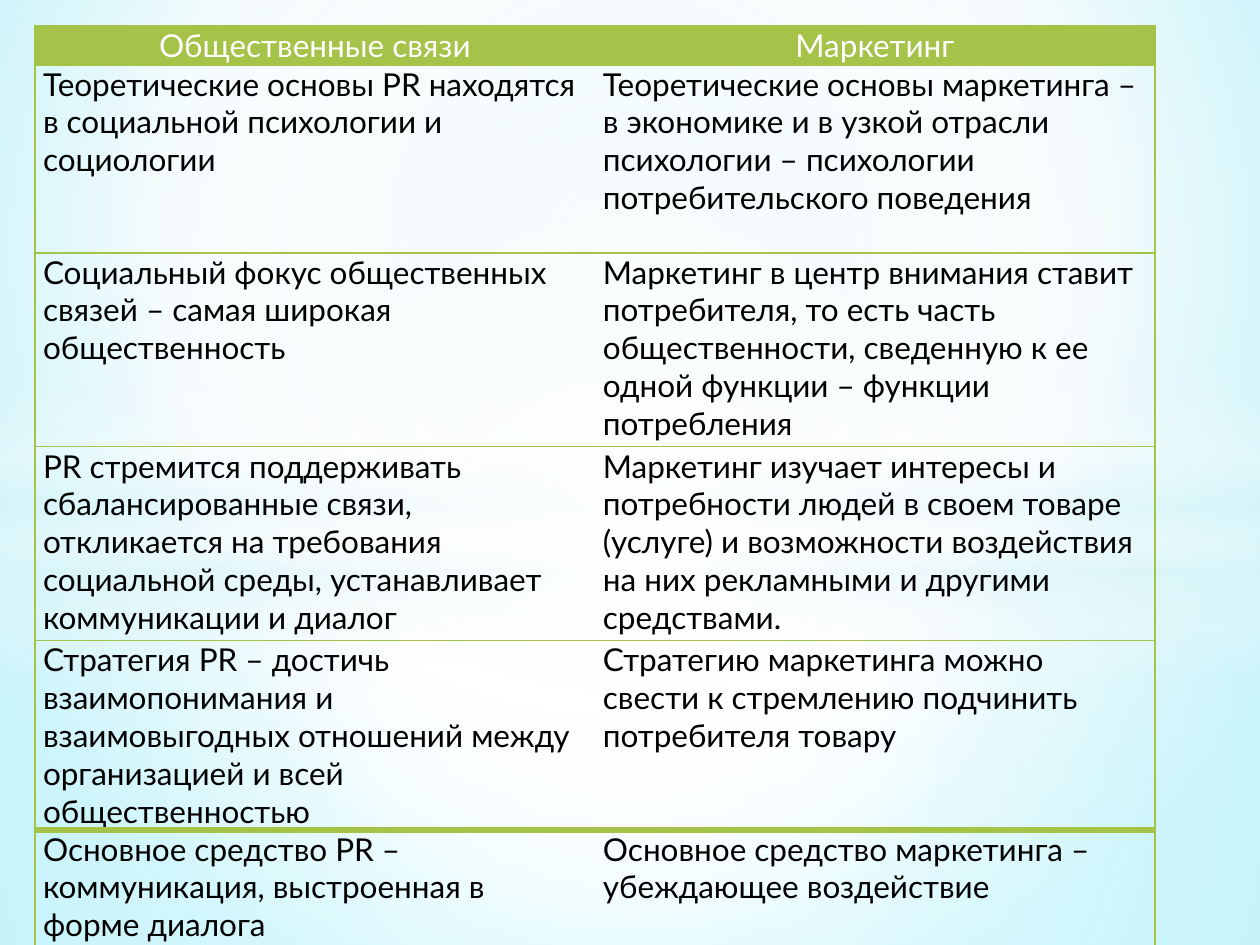
from lxml.etree import SubElement
from pptx import Presentation
from pptx.dml.color import RGBColor
from pptx.enum.shapes import MSO_SHAPE
from pptx.enum.text import PP_ALIGN
from pptx.oxml import parse_xml
from pptx.oxml.ns import nsdecls, qn
from pptx.util import Emu, Pt

PX_PER_INCH = 126
COLORS = {
    "green": "A5C249",
    "white": "FFFFFF",
    "black": "000000",
    "mist": "DBF5F9",
    "ice": "CAF0F6",
    "cyan": "79EDFF",
}
CENTER = (50, 50, 50, 50)
ROWS = [
    ("Общественные связи", "Маркетинг"),
    ("Теоретические основы PR находятся в социальной психологии и социологии",
     "Теоретические основы маркетинга – в экономике и в узкой отрасли психологии – "
     "психологии потребительского поведения"),
    ("Социальный фокус общественных связей – самая широкая общественность",
     "Маркетинг в центр внимания ставит потребителя, то есть часть общественности, "
     "сведенную к ее одной функции – функции потребления"),
    ("PR стремится поддерживать сбалансированные связи, откликается на требования "
     "социальной среды, устанавливает коммуникации и диалог",
     "Маркетинг изучает интересы и потребности людей в своем товаре (услуге) и "
     "возможности воздействия на них рекламными и другими средствами."),
    ("Стратегия PR – достичь взаимопонимания и взаимовыгодных отношений между "
     "организацией и всей общественностью",
     "Стратегию маркетинга можно свести к стремлению подчинить потребителя товару"),
    ("Основное средство PR – коммуникация, выстроенная в форме диалога",
     "Основное средство маркетинга – убеждающее воздействие"),
]
ROW_HEIGHTS = [39, 188, 194, 194, 187, 117]


def px(length):
    return Emu(round(length * 914400 / PX_PER_INCH))


class SlideBuilder:
    """Holds the text style and the current page."""

    font = "Lato"
    size = Pt(18)

    def __init__(self, page):
        self.page = page

    def gradient(self, owner, fill, stops, focus=None):
        """Radial gradient around focus, or a downward one without it; stops are (%, colour, opacity %)."""
        fill.solid()
        solid = owner.find(".//" + qn("a:solidFill"))
        grad = parse_xml(f'<a:gradFill {nsdecls("a")} rotWithShape="1"/>')
        stop_list = SubElement(grad, qn("a:gsLst"))
        for position, color, opacity in stops:
            stop = SubElement(stop_list, qn("a:gs"), pos=str(position * 1000))
            rgb = SubElement(stop, qn("a:srgbClr"), val=COLORS[color])
            if opacity < 100:
                SubElement(rgb, qn("a:alpha"), val=str(opacity * 1000))
        if focus:
            path = SubElement(grad, qn("a:path"), path="circle")
            sides = {side: str(value * 1000) for side, value in zip("ltrb", focus)}
            SubElement(path, qn("a:fillToRect"), **sides)
        else:
            SubElement(grad, qn("a:lin"), ang="5400000", scaled="0")
        solid.getparent().replace(solid, grad)

    def background(self, stops, focus):
        self.gradient(self.page.element, self.page.background.fill, stops, focus)

    def glow(self, kind, top, height, stops, focus=None):
        """Full-width translucent shape without an outline."""
        shape = self.page.shapes.add_shape(kind, 0, px(top), px(1260), px(height))
        shape.shadow.inherit = False
        shape.line.fill.background()
        self.gradient(shape.element, shape.fill, stops, focus)

    def border(self, cell, widths):
        """Draw the sides named in widths (points) and hide the others."""
        properties = cell._tc.get_or_add_tcPr()
        for index, side in enumerate("LRTB"):
            width = widths.get(side, 0)
            line = parse_xml(f'<a:ln{side} {nsdecls("a")} w="{Pt(width)}"/>')
            if width:
                solid = SubElement(line, qn("a:solidFill"))
                SubElement(solid, qn("a:srgbClr"), val=COLORS["green"])
            else:
                SubElement(line, qn("a:noFill"))
            properties.insert(index, line)

    def cell(self, cell, text, is_header):
        cell.margin_left = cell.margin_right = px(8)
        cell.margin_top = cell.margin_bottom = 0
        if is_header:
            cell.fill.solid()
            cell.fill.fore_color.rgb = RGBColor.from_string(COLORS["green"])
        else:
            cell.fill.background()
        para = cell.text_frame.paragraphs[0]
        para.alignment = PP_ALIGN.CENTER if is_header else PP_ALIGN.LEFT
        span = para.add_run()
        span.text = text
        span.font.name = self.font
        span.font.size = self.size
        span.font.bold = False
        span.font.color.rgb = RGBColor.from_string(COLORS["white" if is_header else "black"])

    def table(self, left, top, column_width, heights, rows):
        last_row, last_column = len(rows) - 1, len(rows[0]) - 1
        frame = self.page.shapes.add_table(
            len(rows), len(rows[0]), px(left), px(top),
            px(column_width * len(rows[0])), px(sum(heights)))
        table = frame.table
        for column in table.columns:
            column.width = px(column_width)
        for r, texts in enumerate(rows):
            table.rows[r].height = px(heights[r])
            for c, text in enumerate(texts):
                cell = table.cell(r, c)
                self.cell(cell, text, r == 0)
                widths = {"T": 4 if r == last_row else 0.75,
                          "B": 4 if r == last_row - 1 else 0.75}
                if c == 0:
                    widths["L"] = 0.75
                if c == last_column:
                    widths["R"] = 0.75
                self.border(cell, widths)


def main():
    deck = Presentation()
    deck.slide_width, deck.slide_height = px(1260), px(945)
    slide = SlideBuilder(deck.slides.add_slide(deck.slide_layouts[6]))
    slide.background([(0, "ice", 100), (60, "white", 100), (100, "cyan", 100)], (20, 10, 20, 60))
    slide.glow(MSO_SHAPE.RECTANGLE, 533, 412,
               [(0, "white", 91), (37, "white", 76), (100, "mist", 79)], CENTER)
    slide.glow(MSO_SHAPE.RECTANGLE, 0, 533,
               [(0, "white", 89), (48, "white", 62), (100, "mist", 79)], CENTER)
    slide.glow(MSO_SHAPE.RECTANGLE, 365, 315,
               [(0, "white", 0), (29, "white", 30), (45, "mist", 40),
                (55, "white", 26), (65, "mist", 60), (100, "white", 0)])
    slide.glow(MSO_SHAPE.OVAL, 220, 703, [(0, "white", 100), (54, "white", 0)], CENTER)
    slide.table(35, 26, 560, ROW_HEIGHTS, ROWS)
    deck.save("out.pptx")


if __name__ == "__main__":
    main()
